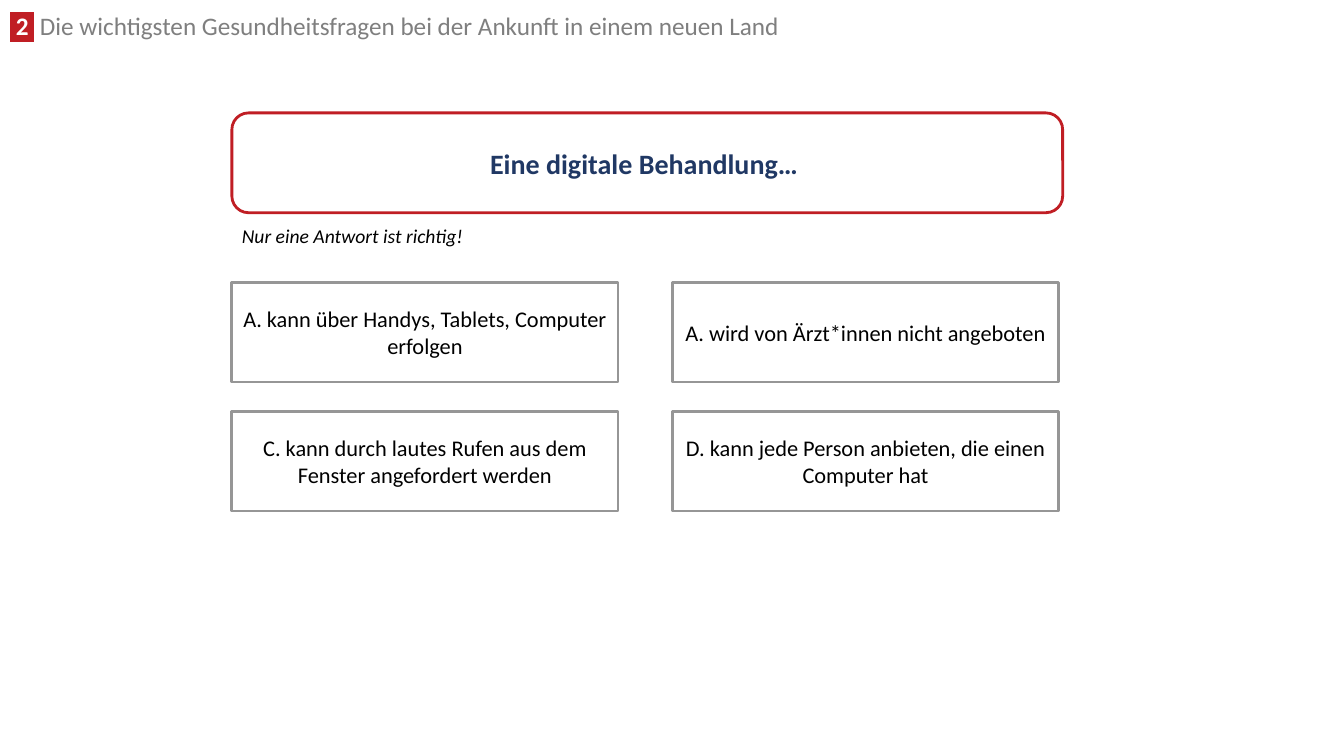
"""Build a quiz slide about digital treatment with one question and four answers."""
from lxml.etree import Element, SubElement
from pptx import Presentation
from pptx.dml.color import RGBColor
from pptx.enum.shapes import MSO_SHAPE
from pptx.enum.text import MSO_ANCHOR, MSO_AUTO_SIZE, PP_ALIGN
from pptx.oxml.ns import qn
from pptx.util import Inches, Pt

COLOURS = {
    "white": "FFFFFF",
    "black": "000000",
    "red": "C01E24",
    "navy": "203864",
    "grey": "7F7F7F",
    "border": "969696",
}
LEFT, COLUMN_STEP, ANSWER_WIDTH = 2.3, 4.37, 3.83
ANSWER_TOP, ROW_STEP, BOX_HEIGHT = 2.8, 1.28, 0.99
ANSWERS = [
    ["A. kann über Handys, Tablets, Computer erfolgen",
     "A. wird von Ärzt*innen nicht angeboten"],
    ["C. kann durch lautes Rufen aus dem Fenster angefordert werden",
     "D. kann jede Person anbieten, die einen Computer hat"],
]


def add_span(para, text, size, colour, bold=False, italic=False):
    """Append one formatted run to a paragraph."""
    span = para.add_run()
    span.text = text
    span.font.name = "Calibri"
    span.font.size = Pt(size)
    span.font.bold = bold
    span.font.italic = italic
    span.font.color.rgb = RGBColor.from_string(COLOURS[colour])
    return span


def add_box(page, kind, place, border, text, size, colour, bold=False):
    """Draw a white outlined box with centred text."""
    box = page.shapes.add_shape(kind, *map(Inches, place))
    box.shadow.inherit = False
    box.fill.solid()
    box.fill.fore_color.rgb = RGBColor.from_string(COLOURS["white"])
    box.line.color.rgb = RGBColor.from_string(COLOURS[border])
    box.line.width = Pt(2)
    box.text_frame.word_wrap = True
    box.text_frame.vertical_anchor = MSO_ANCHOR.MIDDLE
    para = box.text_frame.paragraphs[0]
    para.alignment = PP_ALIGN.CENTER
    add_span(para, text, size, colour, bold)


deck = Presentation()
deck.slide_width, deck.slide_height = Inches(13.33), Inches(7.5)
page = deck.slides.add_slide(deck.slide_layouts[5])

title = page.shapes.title
title.left, title.top = Inches(0), Inches(0.11)
title.width, title.height = Inches(8.57), Inches(0.34)
title.text_frame.word_wrap = True
title.text_frame.auto_size = MSO_AUTO_SIZE.NONE
title.text_frame.vertical_anchor = MSO_ANCHOR.TOP
heading = title.text_frame.paragraphs[0]
heading.alignment = PP_ALIGN.LEFT
heading.line_spacing = 0.8
number = add_span(heading, " 2 ", 18, "white", bold=True)
highlight = Element(qn("a:highlight"))
SubElement(highlight, qn("a:srgbClr"), val=COLOURS["red"])
number.font._element.find(qn("a:solidFill")).addnext(highlight)
add_span(heading, " Die wichtigsten Gesundheitsfragen bei der Ankunft in einem neuen Land",
         18, "grey")

add_box(page, MSO_SHAPE.ROUNDED_RECTANGLE, (LEFT, 1.12, 8.24, BOX_HEIGHT), "red",
        "Eine digitale Behandlung… ", 20, "navy", bold=True)

hint = page.shapes.add_textbox(Inches(LEFT), Inches(2.17), Inches(2.5), Inches(0.34))
hint.text_frame.word_wrap = True
add_span(hint.text_frame.paragraphs[0], "Nur eine Antwort ist richtig!", 14, "black", italic=True)

for row, answers in enumerate(ANSWERS):
    for column, answer in enumerate(answers):
        place = (LEFT + column * COLUMN_STEP, ANSWER_TOP + row * ROW_STEP,
                 ANSWER_WIDTH, BOX_HEIGHT)
        add_box(page, MSO_SHAPE.RECTANGLE, place, "border", answer, 16, "black")

deck.save("out.pptx")
